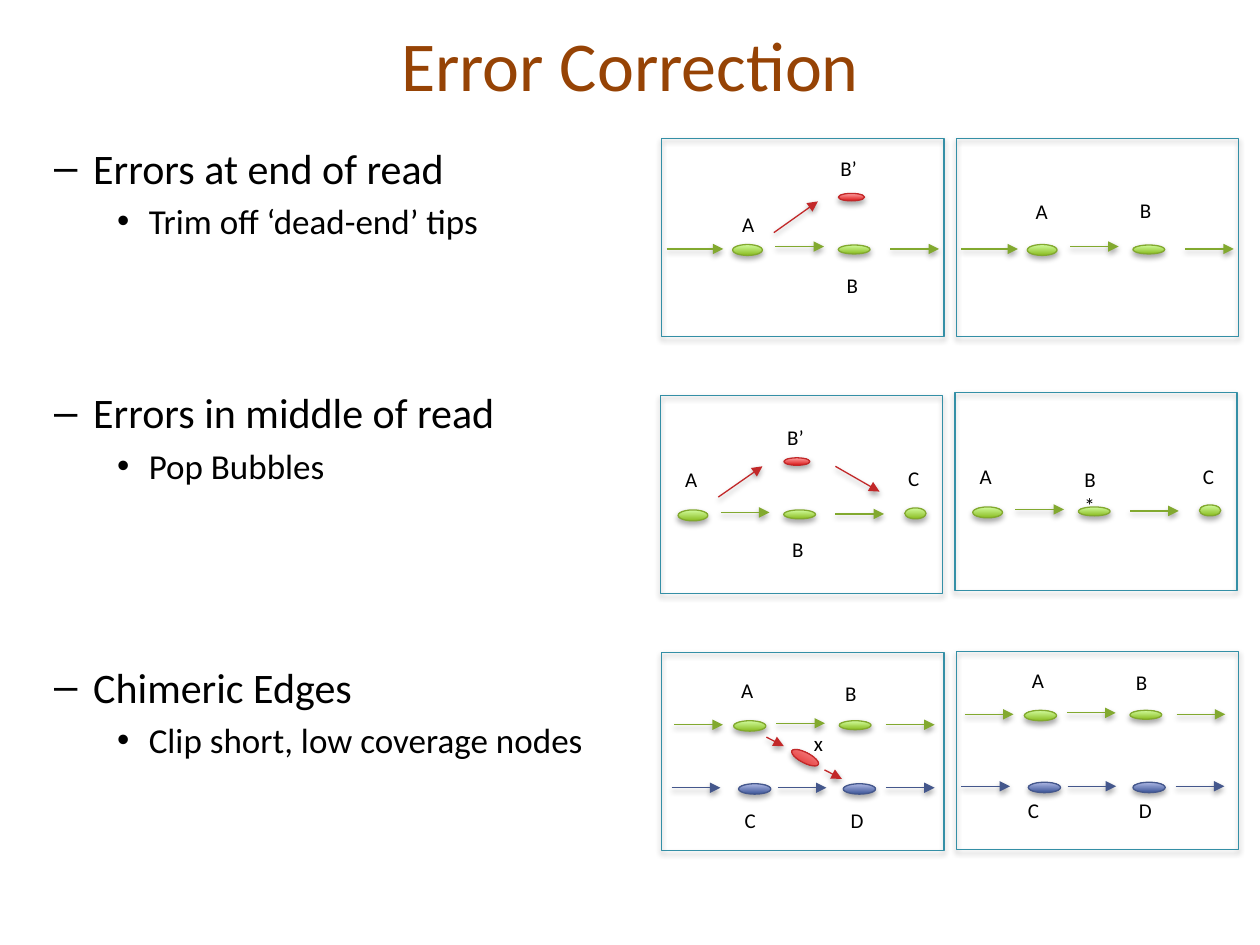
from dataclasses import dataclass, replace

from lxml import etree
from pptx import Presentation
from pptx import util as u
from pptx.dml import color
from pptx.enum import shapes, text
from pptx.oxml import ns


@dataclass(frozen=True)
class Hue:
    dark: str
    light: str
    edge: str


@dataclass(frozen=True)
class Theme:
    face: str = "Calibri"
    title: str = "964305"
    ink: str = "000000"
    frame: str = "348FA6"
    green: Hue = Hue("8ABC21", "D1FC9D", "82A92F")
    red: Hue = Hue("DA1718", "FFA3A3", "C22829")
    blue: Hue = Hue("3C5598", "AEB8E4", "44578C")
    head: int = 40
    point: int = 24
    sub: int = 20
    tag: int = 12
    line: float = 0.75


T = Theme()


@dataclass(frozen=True)
class Node:
    x: float
    y: float
    w: float = 0.64
    h: float = 0.18
    hue: Hue = T.green
    turn: float = 0


@dataclass(frozen=True)
class Arrow:
    x: float
    y: float
    w: float = 0.98
    h: float = 0
    hue: Hue = T.green


@dataclass(frozen=True)
class Tag:
    x: float
    y: float
    word: str
    w: float = 0.97


@dataclass(frozen=True)
class Panel:
    x: float
    y: float
    items: tuple


@dataclass(frozen=True)
class Point:
    word: str
    sub: str
    gap: float


def rgb(code: str) -> color.RGBColor:
    return color.RGBColor.from_string(code)


def style(run, size: int, code: str) -> None:
    for key, val in {"name": T.face, "size": u.Pt(size)}.items():
        setattr(run.font, key, val)
    run.font.color.rgb = rgb(code)


def finish(shape, code: str) -> None:
    shape.line.color.rgb = rgb(code)
    shape.line.width = u.Pt(T.line)
    cast = etree.SubElement(shape._element.spPr, ns.qn("a:effectLst"))
    drop = etree.SubElement(cast, ns.qn("a:outerShdw"), blurRad="40000",
                            dist="23000", dir="5400000", rotWithShape="0")
    shade = etree.SubElement(drop, ns.qn("a:srgbClr"), val=T.ink)
    etree.SubElement(shade, ns.qn("a:alpha"), val="35000")


def draw_node(page, x: float, y: float, node: Node) -> None:
    oval = page.shapes.add_shape(
        shapes.MSO_SHAPE.OVAL, u.Cm(x), u.Cm(y), u.Cm(node.w), u.Cm(node.h))
    oval.rotation = node.turn
    oval.fill.gradient()
    oval.fill.gradient_angle = 90
    for stop, code in zip(oval.fill.gradient_stops, (node.hue.dark, node.hue.light)):
        stop.color.rgb = rgb(code)
    finish(oval, node.hue.edge)


def draw_arrow(page, x: float, y: float, arrow: Arrow) -> None:
    link = page.shapes.add_connector(
        shapes.MSO_CONNECTOR.STRAIGHT, u.Cm(x), u.Cm(y),
        u.Cm(x + arrow.w), u.Cm(y + arrow.h))
    finish(link, arrow.hue.edge)
    line = link._element.spPr.find(ns.qn("a:ln"))
    etree.SubElement(line, ns.qn("a:tailEnd"), type="triangle")


def draw_tag(page, x: float, y: float, tag: Tag) -> None:
    box = page.shapes.add_textbox(u.Cm(x), u.Cm(y), u.Cm(tag.w), u.Cm(0.76))
    box.text_frame.word_wrap = True
    run = box.text_frame.paragraphs[0].add_run()
    run.text = tag.word
    style(run, T.tag, T.ink)


DRAW = {Node: draw_node, Arrow: draw_arrow, Tag: draw_tag}


def draw_panel(page, panel: Panel) -> None:
    frame = page.shapes.add_shape(
        shapes.MSO_SHAPE.RECTANGLE, u.Cm(panel.x), u.Cm(panel.y), u.Cm(5.69), u.Cm(3.99))
    frame.fill.background()
    finish(frame, T.frame)
    for item in panel.items:
        DRAW[type(item)](page, panel.x + item.x, panel.y + item.y, item)


def shift(items: tuple, dx: float, dy: float) -> tuple:
    return tuple(replace(item, x=item.x + dx, y=item.y + dy) for item in items)


def add_line(frame, word: str, size: int, gap: float, mark: str,
             left: float, hang: float, level: int) -> None:
    para = frame.paragraphs[0]
    if para.runs:
        para = frame.add_paragraph()
    for key, val in {"level": level, "space_before": u.Pt(gap)}.items():
        setattr(para, key, val)
    props = para._p.get_or_add_pPr()
    props.set("marL", str(u.Cm(left)))
    props.set("indent", str(u.Cm(-hang)))
    etree.SubElement(props, ns.qn("a:buFont"), typeface="Arial")
    etree.SubElement(props, ns.qn("a:buChar"), char=mark)
    run = para.add_run()
    run.text = word
    style(run, size, T.ink)


TRIM = (Node(1.43, 2.14, 0.6, 0.22), Node(3.56, 2.15), Arrow(0.1, 2.23, 1.14),
        Arrow(2.29, 2.18), Arrow(4.61, 2.23))
TIP = (Node(3.56, 1.11, 0.53, 0.15, T.red), Arrow(2.26, 1.9, 0.89, -0.63, T.red),
       Tag(1.37, 1.35, "A"), Tag(3.48, 2.57, "B", 0.76), Tag(3.35, 0.23, "B’", 1.47))
POP = (Node(0.36, 2.3, 0.6, 0.22), Node(2.49, 2.3), Node(4.93, 2.26, 0.43, 0.22),
       Arrow(1.22, 2.35), Arrow(3.53, 2.38), Tag(0.25, 1.3, "A"), Tag(4.75, 1.29, "C"))
BUBBLE = (Node(2.49, 1.25, 0.53, 0.15, T.red), Arrow(1.17, 2.04, 0.89, -0.62, T.red),
          Arrow(3.53, 1.42, 0.89, 0.51, T.red), Tag(2.41, 2.72, "B", 0.76),
          Tag(2.31, 0.46, "B’", 1.47))
UPPER = (Node(1.45, 1.37, 0.65, 0.21), Node(3.58, 1.37), Arrow(0.25, 1.45),
         Arrow(2.31, 1.42), Arrow(4.52, 1.45), Tag(1.35, 0.38, "A"),
         Tag(3.45, 0.43, "B", 0.76))
LOWER = tuple(Node(x, 2.64, 0.65, 0.21, T.blue) for x in (1.55, 3.66)) + tuple(
    Arrow(x, 2.72, hue=T.blue) for x in (0.2, 2.34, 4.52))
CROSS = (Node(2.59, 2.01, 0.6, 0.21, T.red, 27.4), Arrow(2.11, 1.7, 0.35, 0.18, T.red),
         Arrow(3.28, 2.36, 0.35, 0.18, T.red), Tag(2.82, 1.45, "x", 0.74),
         Tag(1.42, 3, "C"), Tag(3.56, 3, "D"))

PANELS = (
    Panel(13.34, 2.79, TRIM + TIP),
    Panel(19.28, 2.79, TRIM + (Tag(1.35, 1.09, "A"), Tag(3.45, 1.07, "B", 0.76))),
    Panel(13.31, 7.98, POP + BUBBLE),
    Panel(19.25, 7.92, POP + (Tag(2.36, 1.37, "B*", 0.9),)),
    Panel(13.34, 13.16, UPPER + LOWER + CROSS),
    Panel(19.28, 13.13, shift(UPPER, -0.08, -0.18) + shift(LOWER, -0.1, 0)
          + (Tag(1.19, 2.82, "C"), Tag(3.43, 2.82, "D"))),
)
POINTS = (
    Point("Errors at end of read", "Trim off ‘dead-end’ tips", 0),
    Point("Errors in middle of read", "Pop Bubbles", 83),
    Point("Chimeric Edges", "Clip short, low coverage nodes", 100),
)


def main() -> None:
    deck = Presentation()
    deck.slide_width, deck.slide_height = u.Cm(25.4), u.Cm(19.05)
    page = deck.slides.add_slide(deck.slide_layouts[5])
    title = page.shapes.title
    place = {"left": 1.27, "top": 0.43, "width": 22.86, "height": 1.7}
    for key, val in place.items():
        setattr(title, key, u.Cm(val))
    title.text_frame.vertical_anchor = text.MSO_ANCHOR.MIDDLE
    para = title.text_frame.paragraphs[0]
    para.alignment = text.PP_ALIGN.CENTER
    run = para.add_run()
    run.text = "Error Correction"
    style(run, T.head, T.title)

    body = page.shapes.add_textbox(u.Cm(-0.43), u.Cm(2.74), u.Cm(13.94), u.Cm(14.27))
    body.text_frame.word_wrap = True
    for point in POINTS:
        add_line(body.text_frame, point.word, T.point, point.gap, "–", 2.06, 0.79, 1)
        add_line(body.text_frame, point.sub, T.sub, 4, "•", 3.18, 0.64, 2)
    for panel in PANELS:
        draw_panel(page, panel)
    deck.save("out.pptx")


if __name__ == "__main__":
    main()
